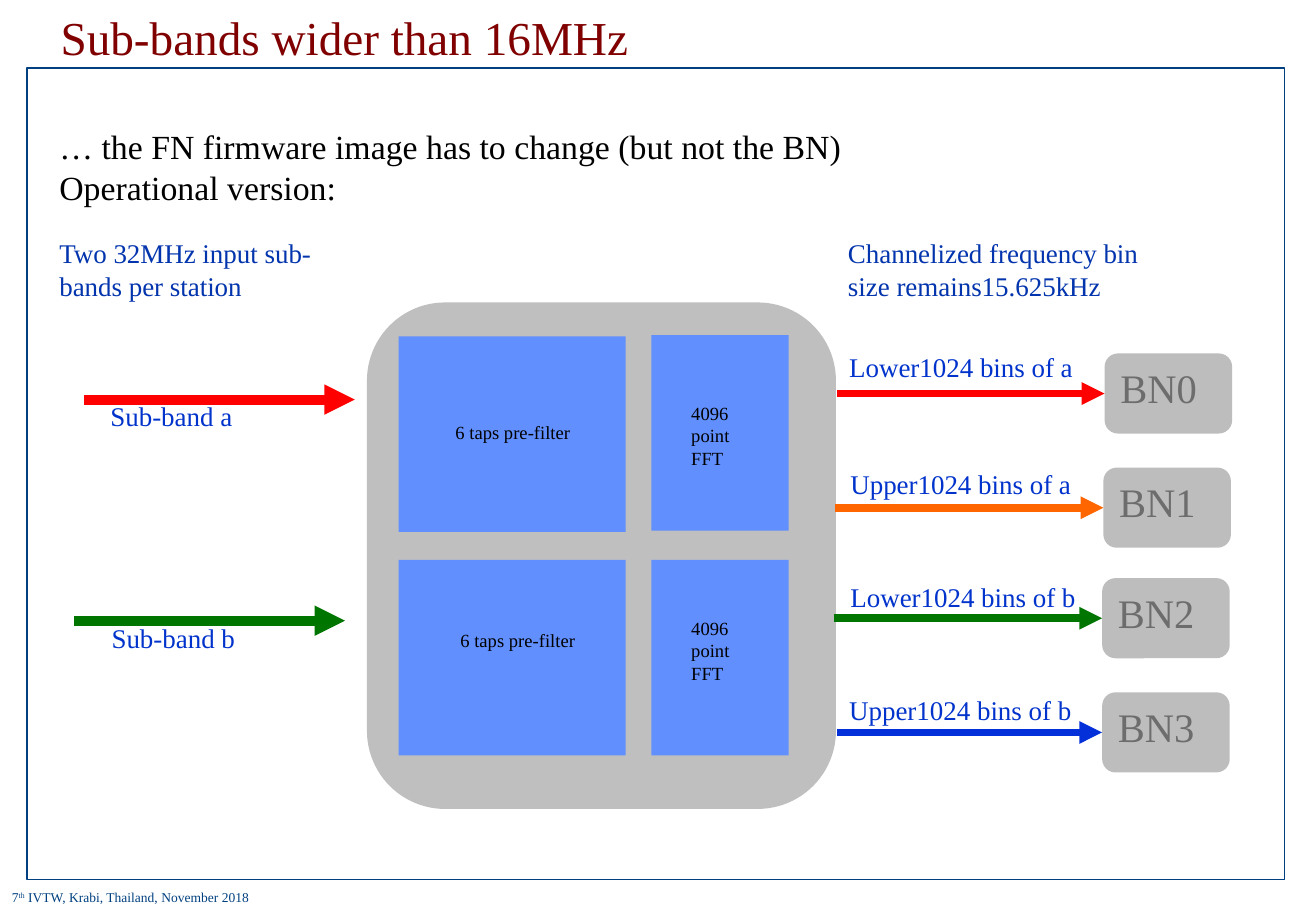
from lxml import etree
from pptx import Presentation
from pptx.dml.color import RGBColor
from pptx.enum.shapes import MSO_CONNECTOR as Conn, MSO_SHAPE as Shape
from pptx.enum.text import MSO_ANCHOR as Anchor, PP_ALIGN as Align
from pptx.oxml.ns import qn
from pptx.util import Pt

PX = 9144  # EMU: 100 px to the inch
FONT = "Times New Roman"

BLACK = RGBColor(0x00, 0x00, 0x00)
WHITE = RGBColor(0xFF, 0xFF, 0xFF)
NAVY = RGBColor(0x00, 0x40, 0x80)
MAROON = RGBColor(0x80, 0x00, 0x00)
LABEL_BLUE = RGBColor(0x00, 0x33, 0xCC)
NOTE_BLUE = RGBColor(0x02, 0x34, 0xAD)
BLOCK_BLUE = RGBColor(0x61, 0x8F, 0xFD)
BOARD_GRAY = RGBColor(0xBF, 0xBF, 0xBF)
NODE_GRAY = RGBColor(0xBD, 0xBD, 0xBD)
NODE_TEXT = RGBColor(0x6D, 0x6D, 0x6D)
RED = RGBColor(0xFF, 0x00, 0x00)
ORANGE = RGBColor(0xFF, 0x66, 0x00)
GREEN = RGBColor(0x00, 0x76, 0x00)
BLUE = RGBColor(0x03, 0x30, 0xD8)

TITLE = "Sub-bands wider than 16MHz"
FOOTER = [("7", False), ("th", True),
          (" IVTW, Krabi, Thailand, November 2018", False)]
INTRO = ["… the FN firmware image has to change (but not the BN)",
         "Operational version:"]
NOTES = [("Two 32MHz input sub-bands per station", (39, 190, 253, 64)),
         ("Channelized frequency bin size remains15.625kHz",
          (688, 190, 289, 64))]
# label, label box, arrow start, arrow colour
INPUTS = [("Sub-band a", (81, 324, 122, 37), (69, 329), RED),
          ("Sub-band b", (82, 507, 123, 37), (61, 511), GREEN)]
INPUT_LENGTH = 223
# text, text box, wraps, block box
STAGES = [
    ("6 taps pre-filter", (365, 342, 116, 29), False, (328, 277, 187, 161)),
    ("4096 point FFT", (559, 326, 71, 66), True, (536, 276, 113, 161)),
    ("6 taps pre-filter", (369, 513, 115, 29), False, (328, 461, 187, 161)),
    ("4096 point FFT", (559, 503, 71, 66), True, (536, 461, 113, 161)),
]
# label, label box, arrow start x, colour, node, node left and top
OUTPUTS = [
    ("Lower1024 bins of a", (689, 284, 207, 37), 689, RED, "BN0", (909, 291)),
    ("Upper1024 bins of a", (690, 380, 204, 37), 687, ORANGE, "BN1", (908, 385)),
    ("Lower1024 bins of b", (690, 473, 208, 37), 686, GREEN, "BN2", (907, 476)),
    ("Upper1024 bins of b", (689, 566, 205, 37), 689, BLUE, "BN3", (907, 570)),
]
NODE_W, NODE_H = 105, 66

prs = Presentation()
prs.slide_width, prs.slide_height = 1083 * PX, 750 * PX
s = prs.slides.add_slide(prs.slide_layouts[6])


def emu(box):
    return [v * PX for v in box]


def style(p, size, color):
    p.alignment = Align.LEFT
    p.font.name, p.font.size = FONT, Pt(size)
    p.font.color.rgb = color


def add_text(lines, box, size, color, wrap=True):
    tf = s.shapes.add_textbox(*emu(box)).text_frame
    tf.word_wrap = wrap
    tf.text = "\n".join(lines)
    for p in tf.paragraphs:
        style(p, size, color)
    return tf


def add_block(kind, box, fill=None, line=None):
    sp = s.shapes.add_shape(kind, *emu(box))
    sp.shadow.inherit = False
    if fill is None:
        sp.fill.background()
    else:
        sp.fill.solid()
        sp.fill.fore_color.rgb = fill
    if line is None:
        sp.line.fill.background()
    else:
        sp.line.color.rgb, sp.line.width = line, Pt(1)
    sp.text_frame.vertical_anchor = Anchor.TOP
    return sp


def add_arrow(x1, x2, y, width, color):
    arrow = s.shapes.add_connector(Conn.STRAIGHT, *emu((x1, y, x2, y)))
    arrow.line.color.rgb, arrow.line.width = color, Pt(width)
    etree.SubElement(arrow.line._get_or_add_ln(), qn("a:tailEnd"),
                     type="triangle")
    etree.SubElement(arrow._element.spPr, qn("a:effectLst"))
    return arrow


add_block(Shape.RECTANGLE, (22, 56, 1035, 668), line=NAVY)
footer = add_block(Shape.RECTANGLE, (0, 727, 327, 23), WHITE)
p = footer.text_frame.paragraphs[0]
for text, raised in FOOTER:
    r = p.add_run()
    r.text = text
    if raised:
        r.font._element.set("baseline", "30000")
style(p, 8, NAVY)

title = add_text([TITLE], (40, 0, 898, 55), 28, MAROON)
title.vertical_anchor = Anchor.MIDDLE
title.paragraphs[0].line_spacing = 1.1
add_text(INTRO, (39, 99, 707, 77), 20, BLACK)
for text, box in NOTES:
    add_text([text], box, 16, NOTE_BLUE)

add_block(Shape.ROUNDED_RECTANGLE, (302, 249, 386, 417), BOARD_GRAY)
for text, text_box, wrap, block_box in STAGES:
    add_block(Shape.RECTANGLE, block_box, BLOCK_BLUE)
    add_text([text], text_box, 11, BLACK, wrap)

for label, box, (x, y), color in INPUTS:
    add_text([label], box, 16, LABEL_BLUE, wrap=False)
    add_arrow(x, x + INPUT_LENGTH, y, 6, color)

for label, box, start, color, name, (x, y) in OUTPUTS:
    node = add_block(Shape.ROUNDED_RECTANGLE, (x, y, NODE_W, NODE_H), NODE_GRAY)
    node.text_frame.text = name
    style(node.text_frame.paragraphs[0], 24, NODE_TEXT)
    add_text([label], box, 16, LABEL_BLUE, wrap=False)
    arrow = add_arrow(start, x, y + NODE_H // 2, 4.5, color)
    arrow.end_connect(node, 1)

prs.save("out.pptx")
